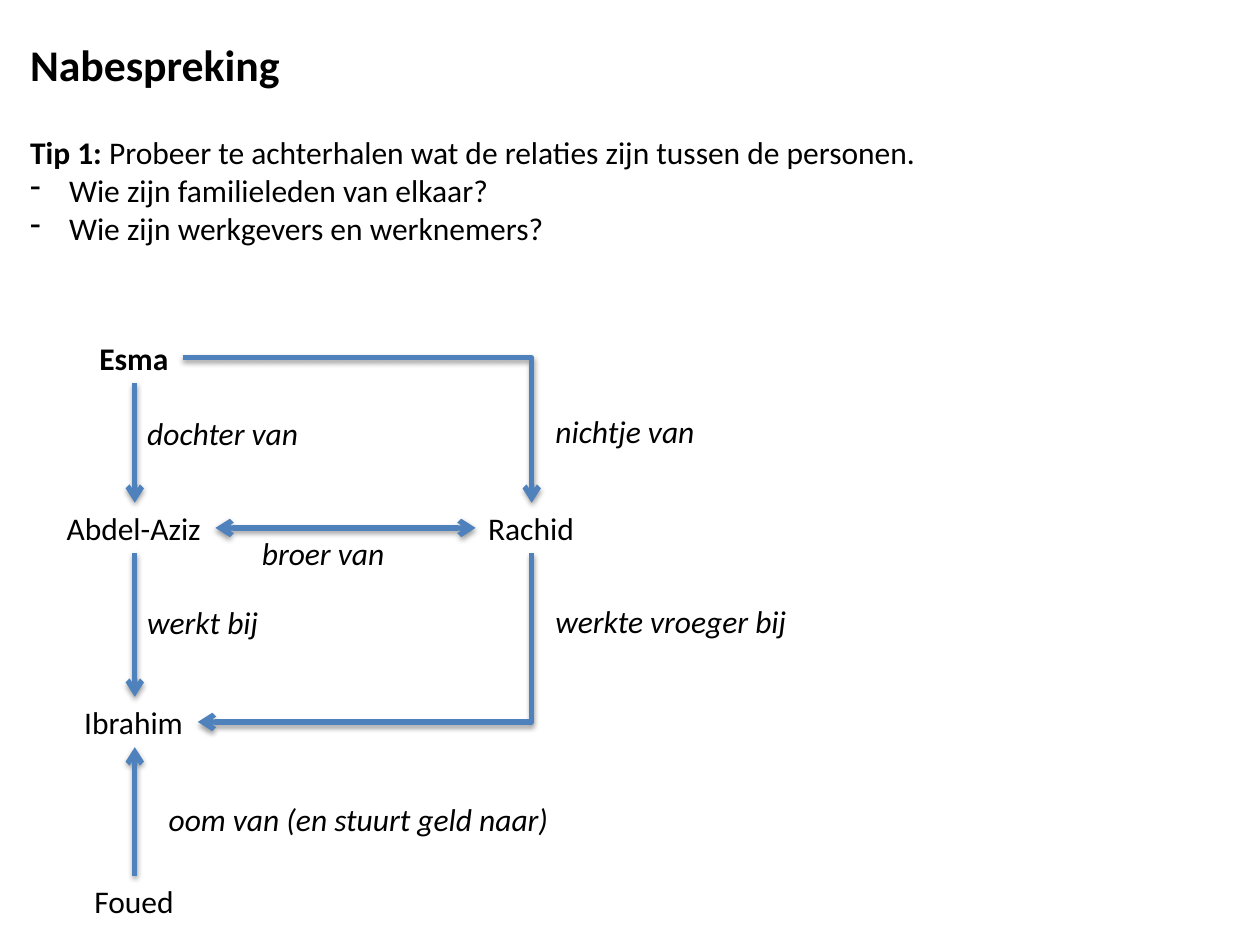
import pptx
import pptx.util
import pptx.dml.color
import pptx.enum.shapes
import pptx.oxml
import pptx.oxml.ns

THEME = {
    "font": "Calibri",
    "text": pptx.dml.color.RGBColor(0x00, 0x00, 0x00),
    "arrow": pptx.dml.color.RGBColor(0x4F, 0x81, 0xBD),
    "title_size": 25,
    "body_size": 18,
    "line_width": 3,
}

TITLE = "Nabespreking"
TIP = ("Tip 1: ", "Probeer te achterhalen wat de relaties zijn tussen de personen.")
QUESTIONS = ["Wie zijn familieleden van elkaar?", "Wie zijn werkgevers en werknemers?"]

WIDTH, HEIGHT = 10, 7.5
MARGIN = 0.14
BOX_HEIGHT = 0.4
INDENT = 0.31
COLUMNS = [0.107 * WIDTH, 0.422 * WIDTH]
ROWS = [2.84, 4.19, 5.73, 7.15]

PEOPLE = {
    "Esma": (0, 0, 0.76),
    "Abdel-Aziz": (0, 1, 1.28),
    "Rachid": (1, 1, 0.89),
    "Ibrahim": (0, 2, 1.0),
    "Foued": (0, 3, 0.84),
}

RELATIONS = [
    ("Esma", "bottom", "Abdel-Aziz", "top", "tail"),
    ("Abdel-Aziz", "right", "Rachid", "left", "both"),
    ("Esma", "right", "Rachid", "top", "tail"),
    ("Ibrahim", "right", "Rachid", "bottom", "head"),
    ("Abdel-Aziz", "bottom", "Ibrahim", "top", "tail"),
    ("Foued", "top", "Ibrahim", "bottom", "tail"),
]

LABELS = [
    ("dochter van", COLUMNS[0], 3.24, 1.48),
    ("broer van", 1.98, ROWS[1], 1.25),
    ("nichtje van", COLUMNS[1] + 0.09, 3.22, 1.41),
    ("werkt bij", COLUMNS[0], 4.74, 1.2),
    ("werkte vroeger bij", COLUMNS[1] + 0.09, 4.73, 2.16),
    ("oom van (en stuurt geld naar)", 1.24, 6.3, 3.35),
]

SIDES = {"left": (-1, 0), "right": (1, 0), "top": (0, -1), "bottom": (0, 1)}
SHADOW = (
    "<a:effectLst %s><a:outerShdw blurRad='40000' dist='20000' dir='5400000' rotWithShape='0'>"
    "<a:srgbClr val='000000'><a:alpha val='38000'/></a:srgbClr></a:outerShdw></a:effectLst>"
    % pptx.oxml.ns.nsdecls("a")
)


def inches(*lengths):
    return [pptx.util.Inches(length) for length in lengths]


def style(run, size=THEME["body_size"], bold=False, italic=False):
    run.font.name = THEME["font"]
    run.font.size = pptx.util.Pt(size)
    run.font.color.rgb = THEME["text"]
    run.font.bold = bold
    run.font.italic = italic


def add_text(slide, text, left, top, width, height=BOX_HEIGHT, wrap=False, **looks):
    shape = slide.shapes.add_textbox(*inches(left, top, width, height))
    shape.text_frame.word_wrap = wrap
    shape.text_frame.text = text
    for paragraph in shape.text_frame.paragraphs:
        for run in paragraph.runs:
            style(run, **looks)
    return shape


def add_tip(slide):
    text = "\n".join([TIP[0], *QUESTIONS])
    shape = add_text(slide, text, MARGIN, 1.01, WIDTH - 0.2, 1.01, wrap=True)
    first, *questions = shape.text_frame.paragraphs
    first.runs[0].font.bold = True
    run = first.add_run()
    run.text = TIP[1]
    style(run)
    for paragraph in questions:
        properties = paragraph._p.get_or_add_pPr()
        properties.set("marL", str(pptx.util.Inches(INDENT)))
        properties.set("indent", str(-pptx.util.Inches(INDENT)))
        bullet = "<a:buChar %s char='-'/>" % pptx.oxml.ns.nsdecls("a")
        properties.append(pptx.oxml.parse_xml(bullet))


def anchor(person, side):
    column, row, width = PEOPLE[person]
    across, down = SIDES[side]
    return COLUMNS[column] + across * width / 2, ROWS[row] + down * BOX_HEIGHT / 2


def add_relation(slide, source, source_side, target, target_side, arrows):
    start, end = anchor(source, source_side), anchor(target, target_side)
    bent = start[0] != end[0] and start[1] != end[1]
    kinds = pptx.enum.shapes.MSO_CONNECTOR
    kind = kinds.ELBOW if bent else kinds.STRAIGHT
    connector = slide.shapes.add_connector(kind, *inches(*start, *end))
    properties = connector._element.spPr
    if bent:
        properties.find(pptx.oxml.ns.qn("a:prstGeom")).set("prst", "bentConnector2")
    connector.line.color.rgb = THEME["arrow"]
    connector.line.width = pptx.util.Pt(THEME["line_width"])
    for end_name in ("head", "tail"):
        if arrows in (end_name, "both"):
            arrowhead = "<a:%sEnd %s type='arrow'/>" % (end_name, pptx.oxml.ns.nsdecls("a"))
            connector.line._get_or_add_ln().append(pptx.oxml.parse_xml(arrowhead))
    properties.append(pptx.oxml.parse_xml(SHADOW))


def main():
    presentation = pptx.Presentation()
    presentation.slide_width, presentation.slide_height = inches(WIDTH, HEIGHT)
    slide = presentation.slides.add_slide(presentation.slide_layouts[6])
    add_text(slide, TITLE, MARGIN, 0.25, 2.21, 0.52, size=THEME["title_size"], bold=True)
    add_tip(slide)
    for person, (column, row, width) in PEOPLE.items():
        left, top = COLUMNS[column] - width / 2, ROWS[row] - BOX_HEIGHT / 2
        add_text(slide, person, left, top, width, bold=person == "Esma")
    for relation in RELATIONS:
        add_relation(slide, *relation)
    for label in LABELS:
        add_text(slide, *label, italic=True)
    presentation.save("out.pptx")


if __name__ == "__main__":
    main()
